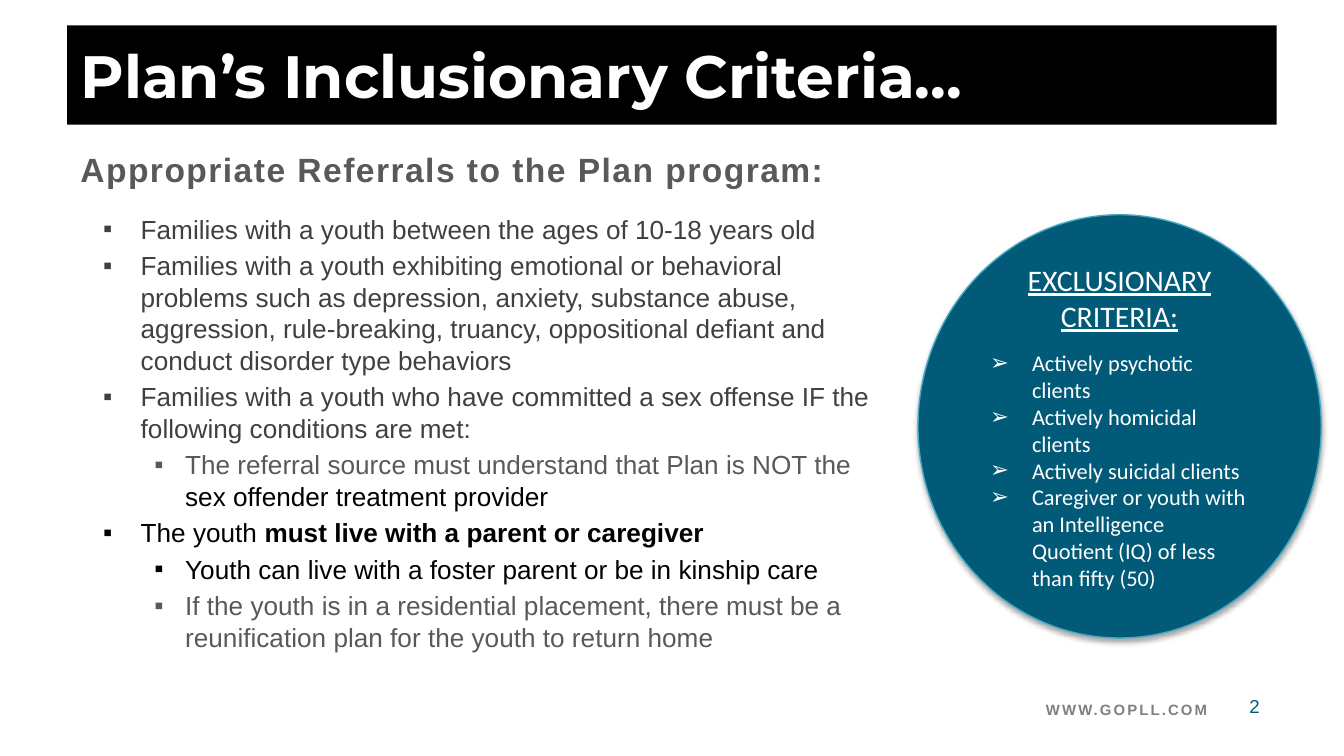
from dataclasses import dataclass

from lxml.etree import SubElement
from pptx import Presentation
from pptx.dml.color import RGBColor
from pptx.enum.shapes import MSO_SHAPE
from pptx.enum.text import MSO_ANCHOR, PP_ALIGN
from pptx.oxml import parse_xml
from pptx.oxml.ns import nsdecls, qn
from pptx.util import Cm, Pt


@dataclass(frozen=True)
class Theme:
    black: str = "000000"
    white: str = "FFFFFF"
    dark: str = "404040"
    mid: str = "595959"
    gray: str = "808080"
    teal: str = "005A78"
    edge: str = "45A9C4"
    sans: str = "Arial"
    head: str = "Montserrat"
    round: str = "Calibri"
    title: int = 32
    sub: int = 18
    label: int = 16
    body: int = 14
    item: int = 12
    page: int = 10
    foot: int = 8


theme = Theme()


def style(run, size, color, face=theme.sans, bold=False, track=0):
    """Format one run; track is letter spacing in hundredths of a point."""
    font = run.font
    font.size, font.name, font.bold = Pt(size), face, bold
    font.color.rgb = RGBColor.from_string(color)
    if track:
        run._r.get_or_add_rPr().set("spc", str(track))


def bullet(para, mark, left, hang):
    props = para._p.get_or_add_pPr()
    props.set("marL", str(Cm(left)))
    props.set("indent", str(-Cm(hang)))
    SubElement(props, qn("a:buFont")).set("typeface", theme.sans)
    SubElement(props, qn("a:buChar")).set("char", mark)


deck = Presentation()
deck.slide_width, deck.slide_height = Cm(25.4), Cm(14.29)
slide = deck.slides.add_slide(deck.slide_layouts[6])
shapes = slide.shapes

# Title bar
bar = shapes.add_shape(MSO_SHAPE.RECTANGLE, Cm(1.27), Cm(0.48), Cm(22.86), Cm(1.88))
bar.shadow.inherit = False
bar.fill.solid()
bar.fill.fore_color.rgb = RGBColor.from_string(theme.black)
bar.line.fill.background()
frame = bar.text_frame
frame.text = "Plan’s Inclusionary Criteria…"
frame.vertical_anchor = MSO_ANCHOR.MIDDLE
frame.paragraphs[0].alignment = PP_ALIGN.LEFT
style(frame.paragraphs[0].runs[0], theme.title, theme.white, theme.head, True)

# Heading, web address and page number
lines = [
    ("Appropriate Referrals to the Plan program:", (1.27, 2.69, 20.75, 1.04),
     PP_ALIGN.LEFT, MSO_ANCHOR.TOP, (theme.sub, theme.mid, theme.sans, True, 80)),
    ("WWW.GOPLL.COM", (7.19, 13.16, 15.88, 0.51),
     PP_ALIGN.RIGHT, MSO_ANCHOR.MIDDLE, (theme.foot, theme.gray, theme.sans, True, 110)),
    ("2", (23.19, 13, 1.04, 0.71),
     PP_ALIGN.CENTER, MSO_ANCHOR.MIDDLE, (theme.page, theme.teal)),
]
for text, place, align, anchor, look in lines:
    frame = shapes.add_textbox(*map(Cm, place)).text_frame
    frame.word_wrap = True
    frame.vertical_anchor = anchor
    frame.text = text
    frame.paragraphs[0].alignment = align
    style(frame.paragraphs[0].runs[0], *look)

# Criteria list: level, then runs of text, color and weight
points = [
    (0, [("Families with a youth between the ages of 10-18 years old", theme.dark, False)]),
    (0, [("Families with a youth exhibiting emotional or behavioral problems such as "
          "depression, anxiety, substance abuse, aggression, rule-breaking, truancy, "
          "oppositional defiant and conduct disorder type behaviors", theme.dark, False)]),
    (0, [("Families with a youth who have committed a sex offense IF the following "
          "conditions are met:", theme.dark, False)]),
    (1, [("The referral source must understand that Plan is NOT the ", theme.mid, False),
         ("sex offender treatment provider", theme.black, False)]),
    (0, [("The youth ", theme.black, False),
         ("must live with a parent or caregiver", theme.black, True)]),
    (1, [("Youth can live with a foster parent or be in kinship care", theme.black, False)]),
    (1, [("If the youth is in a residential placement, there must be a reunification "
          "plan for the youth to return home", theme.mid, False)]),
]
indents = [(0.71, 0.71), (1.55, 0.58)]
frame = shapes.add_textbox(Cm(1.7), Cm(3.61), Cm(15.04), Cm(9.55)).text_frame
frame.word_wrap = True
for row, (level, parts) in enumerate(points):
    para = frame.add_paragraph() if row else frame.paragraphs[0]
    para.level = level
    bullet(para, "▪", *indents[level])
    if row:
        para.space_before = Pt(2.8)
    else:
        para.line_spacing = 1.5
    for text, color, bold in parts:
        run = para.add_run()
        run.text = text
        style(run, theme.body, color, bold=bold)

# Exclusion circle with a soft shadow below
disc = shapes.add_shape(MSO_SHAPE.OVAL, Cm(17.35), Cm(4.06), Cm(7.62), Cm(8))
disc.fill.solid()
disc.fill.fore_color.rgb = RGBColor.from_string(theme.teal)
disc.line.color.rgb = RGBColor.from_string(theme.edge)
disc.line.width = Pt(0.75)
disc._element.spPr.append(parse_xml(
    f'<a:effectLst {nsdecls("a")}><a:outerShdw blurRad="{Pt(3.1)}" dist="{Pt(1.8)}" '
    f'dir="5400000" rotWithShape="0"><a:srgbClr val="{theme.black}">'
    '<a:alpha val="35000"/></a:srgbClr></a:outerShdw></a:effectLst>'))
frame = disc.text_frame
frame.word_wrap = True
frame.vertical_anchor = MSO_ANCHOR.MIDDLE
frame.text = "EXCLUSIONARY CRITERIA:"
label = frame.paragraphs[0]
label.alignment = PP_ALIGN.CENTER
label.space_after = Pt(8.5)
style(label.runs[0], theme.label, theme.white, theme.round)
label.runs[0].font.underline = True
for text in [
    "Actively psychotic clients",
    "Actively homicidal clients",
    "Actively suicidal clients",
    "Caregiver or youth with an Intelligence Quotient (IQ) of less than fifty (50)",
]:
    para = frame.add_paragraph()
    para.text = text
    para.alignment = PP_ALIGN.LEFT
    bullet(para, "➢", 0.79, 0.79)
    style(para.runs[0], theme.item, theme.white, theme.round)

deck.save("out.pptx")
